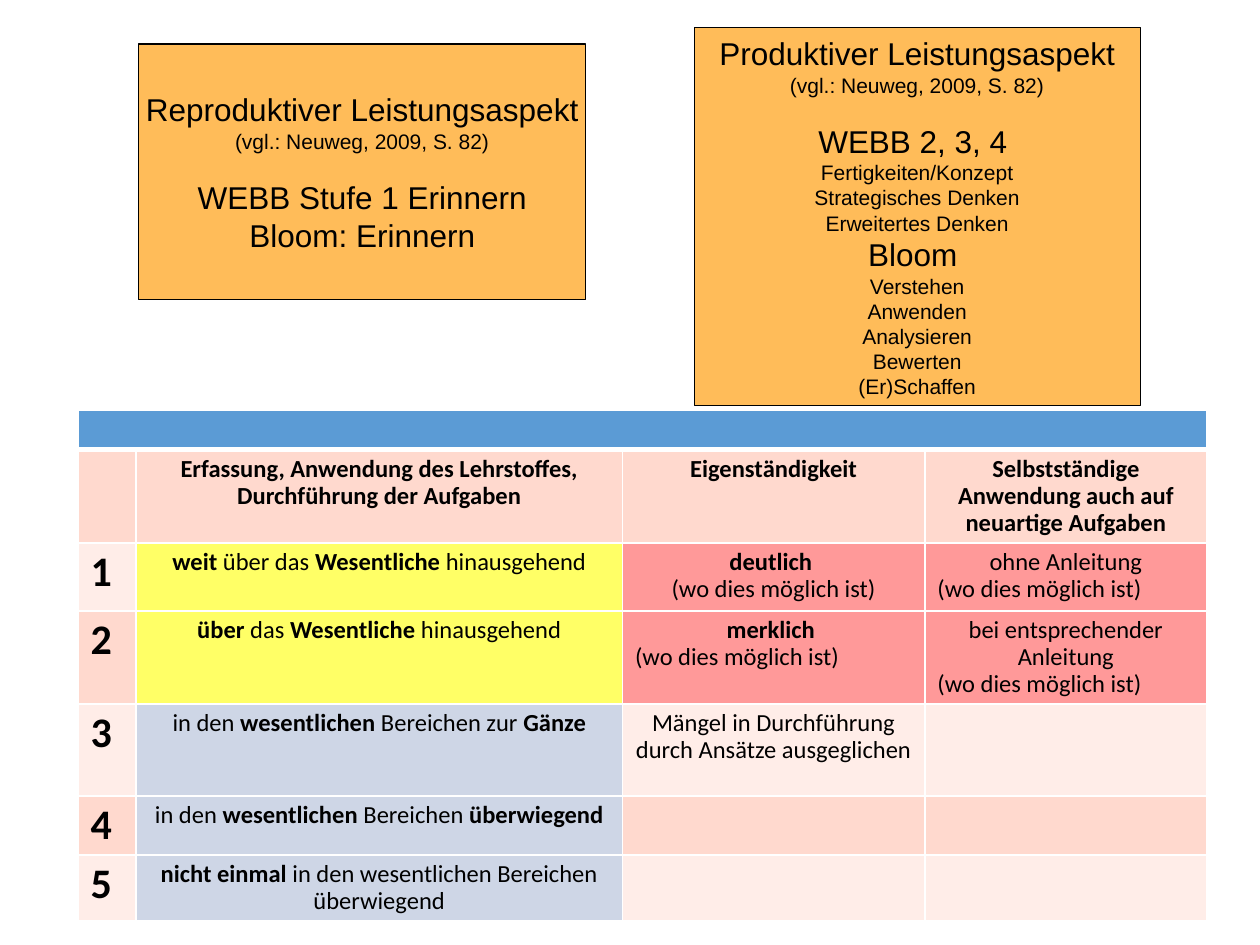
from pptx import Presentation, util as u
from pptx.dml.color import RGBColor
from pptx.enum import shapes, text
from pptx.oxml.ns import qn
from lxml import etree

BLACK = RGBColor(0, 0, 0)
WHITE = RGBColor(255, 255, 255)
ORANGE = RGBColor(0xFF, 0x99, 0x00)
BLUE = RGBColor(0x5B, 0x9B, 0xD5)
ROSE = RGBColor(0xFF, 0xD9, 0xCE)
PALE = RGBColor(0xFF, 0xED, 0xE8)
YELLOW = RGBColor(0xFF, 0xFF, 0x66)
RED = RGBColor(0xFF, 0x99, 0x99)
GREY = RGBColor(0xCE, 0xD6, 0xE6)
LEFT, CENTER = text.PP_ALIGN.LEFT, text.PP_ALIGN.CENTER
NOTE = "(wo dies möglich ist)"
SOURCE = "(vgl.: Neuweg, 2009, S. 82)"

REPRODUCTIVE = [
    ("Reproduktiver Leistungsaspekt", 18, 0), (SOURCE, 12, 0),
    ("WEBB Stufe 1 Erinnern", 18, 14), ("Bloom: Erinnern", 18, 0),
]
PRODUCTIVE = [
    ("Produktiver Leistungsaspekt", 18, 0), (SOURCE, 12, 0),
    ("WEBB 2, 3, 4 ", 18, 14),
    *[(line, 12, 0) for line in ("Fertigkeiten/Konzept", "Strategisches Denken", "Erweitertes Denken")],
    ("Bloom ", 18, 0),
    *[(line, 12, 0) for line in ("Verstehen", "Anwenden", "Analysieren", "Bewerten", "(Er)Schaffen")],
]
COLUMNS = [0.46, 3.86, 2.4, 2.24]
ROWS = [0.31, 0.73, 0.54, 0.73, 0.73, 0.46, 0.52]
HEADINGS = [
    "", "*Erfassung, Anwendung des Lehrstoffes, Durchführung der Aufgaben*",
    "*Eigenständigkeit*", "*Selbstständige Anwendung auch auf neuartige Aufgaben*",
]
GRADES = [
    ("*weit* über das *Wesentliche* hinausgehend", YELLOW, RED,
     [("*deutlich *", CENTER), (NOTE, CENTER)], [("ohne Anleitung", CENTER), (NOTE, LEFT)]),
    ("*über* das *Wesentliche* hinausgehend", YELLOW, RED,
     [("*merklich *", CENTER), (NOTE, LEFT)], [("bei entsprechender Anleitung", CENTER), (NOTE, LEFT)]),
    ("in den *wesentlichen* Bereichen zur *Gänze*", GREY, None,
     [("Mängel in Durchführung durch Ansätze ausgeglichen", CENTER)], []),
    ("in den *wesentlichen* Bereichen *überwiegend*", GREY, None, [], []),
    ("*nicht einmal *in den wesentlichen Bereichen überwiegend", GREY, None, [], []),
]


class SlideBuilder:
    """Holds the slide and its style and adds boxes and table cells."""

    box_font = "Arial"
    table_font = "Calibri"

    def __init__(self, slide):
        self.slide = slide

    def run(self, paragraph, words, font, size, bold=False):
        run = paragraph.add_run()
        run.text = words
        run.font.name = font
        run.font.size = u.Pt(size)
        run.font.bold = bold
        run.font.color.rgb = BLACK

    def box(self, left, top, width, height, lines):
        shape = self.slide.shapes.add_shape(
            shapes.MSO_SHAPE.RECTANGLE, u.Inches(left), u.Inches(top), u.Inches(width), u.Inches(height))
        shape.shadow.inherit = False
        shape.fill.solid()
        shape.fill.fore_color.rgb = ORANGE
        color = shape.fill._xPr.find(qn("a:solidFill")).find(qn("a:srgbClr"))
        etree.SubElement(color, qn("a:alpha"), val="65000")
        shape.line.color.rgb = BLACK
        shape.line.width = u.Pt(0.75)
        frame = shape.text_frame
        frame.word_wrap = False
        frame.vertical_anchor = text.MSO_ANCHOR.MIDDLE
        for index, (words, size, gap) in enumerate(lines):
            paragraph = frame.add_paragraph() if index else frame.paragraphs[0]
            paragraph.alignment = CENTER
            paragraph.space_before = u.Pt(gap)
            self.run(paragraph, words, self.box_font, size)

    def table(self, left, top, columns, rows):
        table = self.slide.shapes.add_table(
            len(rows), len(columns), u.Inches(left), u.Inches(top),
            u.Inches(sum(columns)), u.Inches(sum(rows))).table
        for column, width in zip(table.columns, columns):
            column.width = u.Inches(width)
        for row, height in zip(table.rows, rows):
            row.height = u.Inches(height)
        return table

    def border(self, cell, side, width):
        line = etree.SubElement(cell._tc.get_or_add_tcPr(), qn(f"a:ln{side}"), w=str(u.Pt(width)))
        fill = etree.SubElement(line, qn("a:solidFill"))
        etree.SubElement(fill, qn("a:srgbClr"), val=str(WHITE))

    def cell(self, cell, color, lines=(), size=14, top=1, bottom=1):
        for side, width in (("L", 1), ("R", 1), ("T", top), ("B", bottom)):
            self.border(cell, side, width)
        cell.fill.solid()
        cell.fill.fore_color.rgb = color
        frame = cell.text_frame
        if not lines:
            etree.SubElement(frame.paragraphs[0]._p, qn("a:endParaRPr"), sz="1200")
        for index, (words, alignment) in enumerate(lines):
            paragraph = frame.add_paragraph() if index else frame.paragraphs[0]
            paragraph.alignment = alignment
            paragraph.line_spacing = 0.9
            for part, piece in enumerate(words.split("*")):
                if piece:
                    self.run(paragraph, piece, self.table_font, size, part % 2 == 1)


def main():
    presentation = Presentation()
    presentation.slide_width = u.Inches(10)
    presentation.slide_height = u.Inches(7.5)
    builder = SlideBuilder(presentation.slides.add_slide(presentation.slide_layouts[6]))

    table = builder.table(0.62, 3.26, COLUMNS, ROWS)
    for column, heading in enumerate(HEADINGS):
        builder.cell(table.cell(0, column), BLUE, bottom=3)
        builder.cell(table.cell(1, column), ROSE, [(heading, CENTER)] if heading else [], top=3)
    table.cell(0, 0).merge(table.cell(0, len(COLUMNS) - 1))

    for grade, (coverage, coverage_color, rating_color, independence, transfer) in enumerate(GRADES, 1):
        band = PALE if grade % 2 else ROSE
        row = grade + 1
        builder.cell(table.cell(row, 0), band, [(f"*{grade}*", LEFT)], size=24)
        builder.cell(table.cell(row, 1), coverage_color, [(coverage, CENTER)])
        builder.cell(table.cell(row, 2), rating_color or band, independence)
        builder.cell(table.cell(row, 3), rating_color or band, transfer)

    builder.box(1.1, 0.35, 3.55, 2.03, REPRODUCTIVE)
    builder.box(5.51, 0.22, 3.54, 3, PRODUCTIVE)
    presentation.save("out.pptx")


if __name__ == "__main__":
    main()
